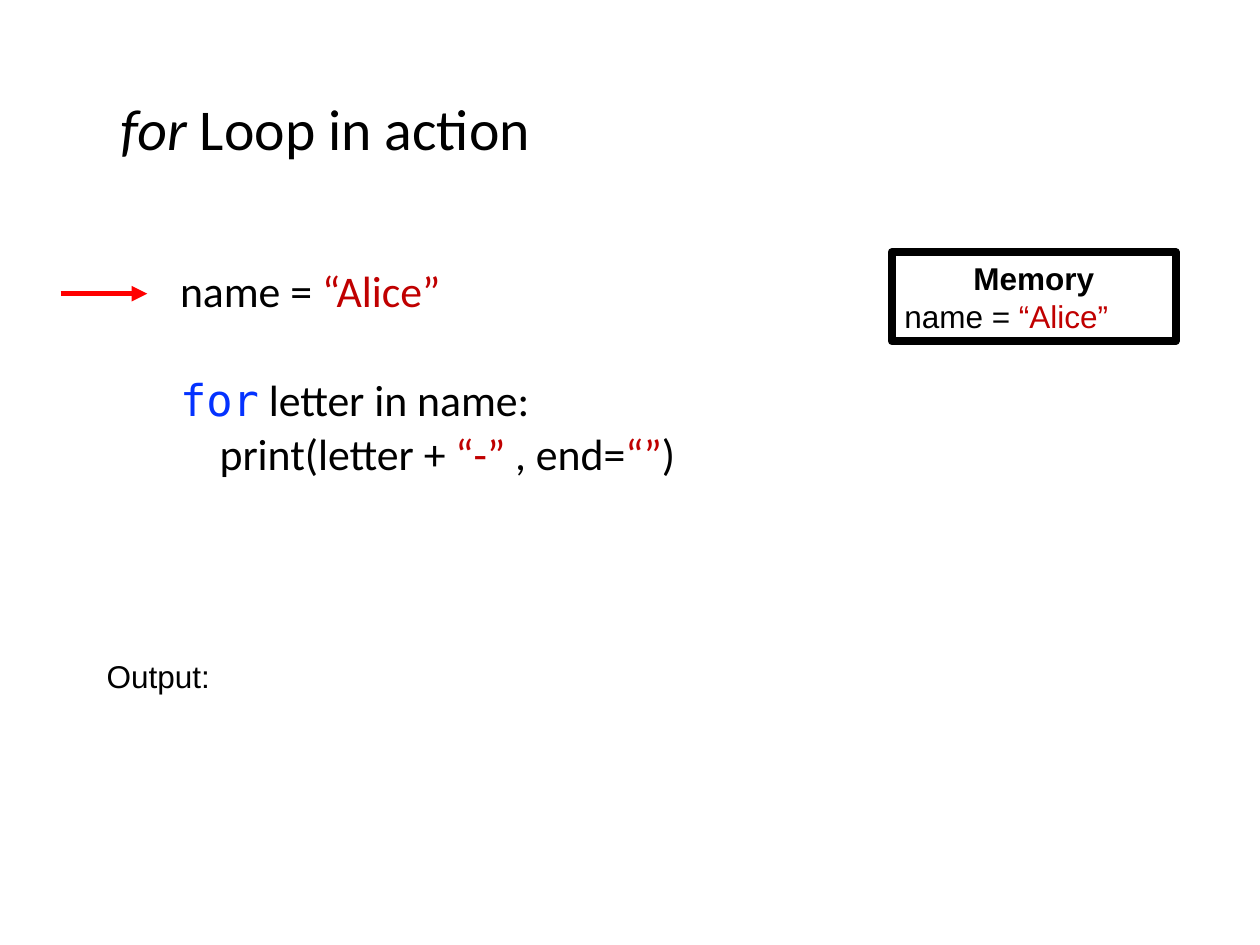
from dataclasses import dataclass

from pptx import Presentation
from pptx.dml.color import RGBColor
from pptx.enum.shapes import MSO_CONNECTOR, MSO_SHAPE
from pptx.enum.text import MSO_ANCHOR, PP_ALIGN
from pptx.oxml.ns import qn
from pptx.util import Cm, Pt
from lxml.etree import SubElement


@dataclass(frozen=True)
class Theme:
    black: RGBColor = RGBColor(0x00, 0x00, 0x00)
    string: RGBColor = RGBColor(0xC0, 0x00, 0x00)
    keyword: RGBColor = RGBColor(0x04, 0x32, 0xFF)
    pointer: RGBColor = RGBColor(0xFF, 0x00, 0x00)
    heading_font: str = "Calibri"
    label_font: str = "Arial"
    code_font: str = "DejaVu Sans Mono"
    title_size: Pt = Pt(33)
    code_size: Pt = Pt(25)
    label_size: Pt = Pt(18)


THEME = Theme()
TITLE = {"name": THEME.heading_font, "size": THEME.title_size}
CODE = {"name": THEME.heading_font, "size": THEME.code_size}
LABEL = {"name": THEME.label_font, "size": THEME.label_size}
STRING = {"color": THEME.string}
KEYWORD = {"name": THEME.code_font, "color": THEME.keyword}


def set_attributes(target, values):
    for name, value in values.items():
        setattr(target, name, value)


def write_paragraphs(text_frame, paragraphs, base):
    """Each paragraph is (format values, [(text, font values), ...])."""
    for index, (layout, runs) in enumerate(paragraphs):
        paragraph = text_frame.paragraphs[0] if index == 0 else text_frame.add_paragraph()
        set_attributes(paragraph, layout)
        for text, changes in runs:
            run = paragraph.add_run()
            run.text = text
            values = {"color": THEME.black, **base, **changes}
            run.font.color.rgb = values.pop("color")
            set_attributes(run.font, values)


def add_text(slide, box, paragraphs, base, anchor=MSO_ANCHOR.TOP):
    shape = slide.shapes.add_textbox(*map(Cm, box))
    set_attributes(shape.text_frame, {"word_wrap": True, "vertical_anchor": anchor})
    write_paragraphs(shape.text_frame, paragraphs, base)


def add_framed_text(slide, box, paragraphs, base):
    shape = slide.shapes.add_shape(MSO_SHAPE.RECTANGLE, *map(Cm, box))
    shape.shadow.inherit = False
    shape.fill.background()
    shape.line.color.rgb = THEME.black
    shape.line.width = Pt(4.5)
    set_attributes(shape.text_frame, {"word_wrap": True, "vertical_anchor": MSO_ANCHOR.MIDDLE})
    write_paragraphs(shape.text_frame, paragraphs, base)


def add_arrow(slide, left, right, y):
    arrow = slide.shapes.add_connector(MSO_CONNECTOR.STRAIGHT, Cm(left), Cm(y), Cm(right), Cm(y))
    arrow.line.color.rgb = THEME.pointer
    arrow.line.width = Pt(3)
    SubElement(arrow.line._get_or_add_ln(), qn("a:tailEnd"), type="triangle")
    SubElement(arrow._element.spPr, qn("a:effectLst"))


def main():
    presentation = Presentation()
    presentation.slide_width, presentation.slide_height = Cm(25.4), Cm(19.05)
    slide = presentation.slides.add_slide(presentation.slide_layouts[6])

    # Title
    tight = {"line_spacing": 0.9}
    add_text(slide, (2.18, 1.7, 22.02, 1.9),
             [(tight, [("for", {"italic": True}), (" Loop in action", {})])],
             TITLE, MSO_ANCHOR.MIDDLE)

    # Program, with a wide gap before the loop
    add_text(slide, (3.38, 5.32, 12.5, 11.68), [
        (tight, [("name = ", {}), ("“Alice”", STRING)]),
        ({**tight, "space_before": Pt(35)}, [("for", KEYWORD), (" letter in name:", {})]),
        ({**tight, "space_before": Pt(3.8)}, [
            ("    print(letter + ", {}), ("“-”", STRING),
            (" , end=", {}), ("“”", STRING), (")", {})]),
    ], CODE)

    # Memory contents
    add_framed_text(slide, (17.98, 5.08, 5.72, 1.8), [
        ({"alignment": PP_ALIGN.CENTER}, [("Memory", {"bold": True})]),
        ({"alignment": PP_ALIGN.LEFT}, [("name = ", {}), ("“Alice”", STRING)]),
    ], LABEL)

    # Pointer to the current line
    add_arrow(slide, 1.22, 2.97, 5.92)

    # Output area
    add_text(slide, (1.9, 13.13, 10.36, 1.8), [({}, [("Output:", {})])], LABEL)

    presentation.save("out.pptx")


if __name__ == "__main__":
    main()
